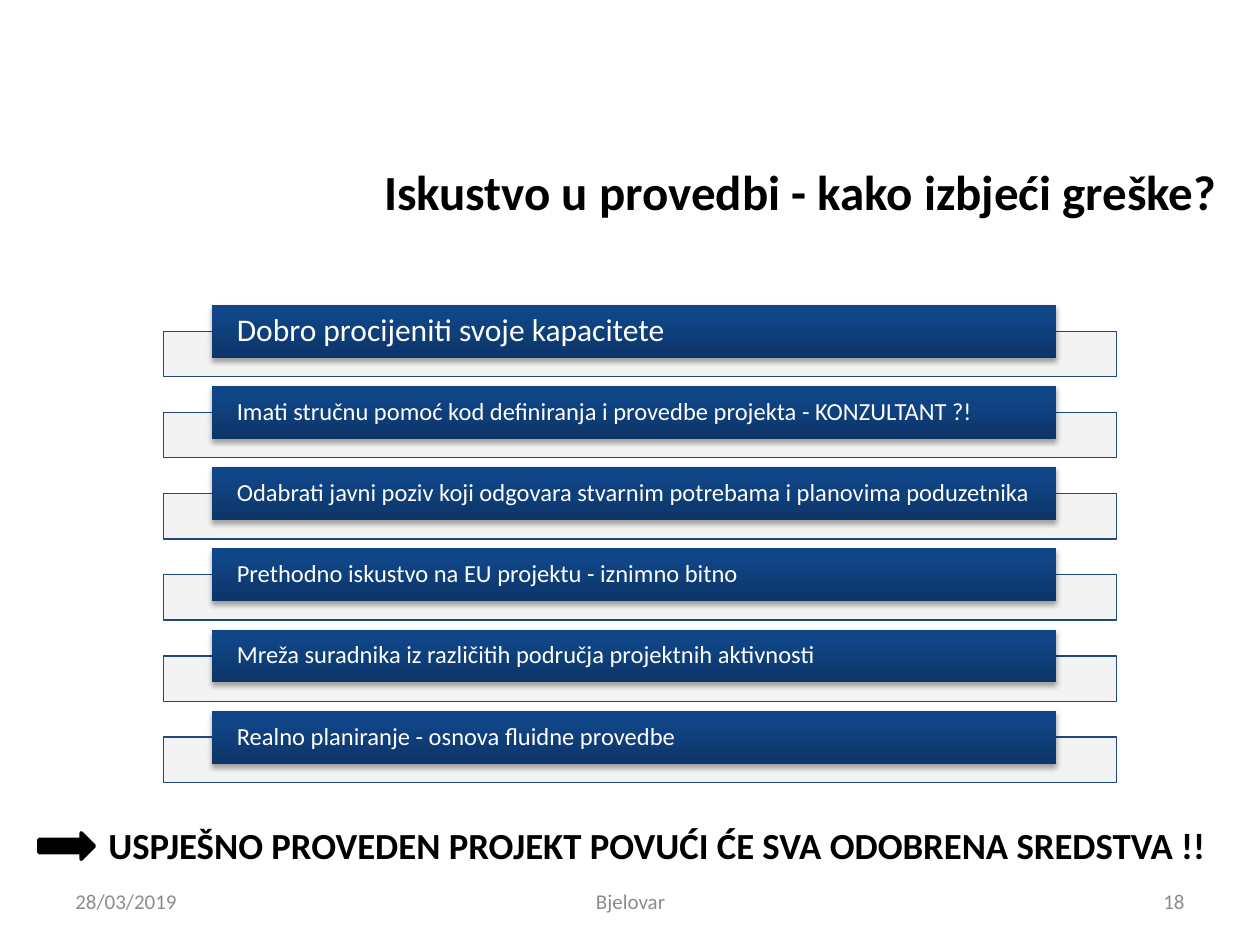
"""Build the slide on avoiding mistakes in project implementation."""
from lxml.etree import SubElement
from pptx import Presentation
from pptx.dml.color import RGBColor
from pptx.enum.shapes import MSO_SHAPE as SHAPE
from pptx.enum.text import MSO_ANCHOR as ANCHOR, PP_ALIGN as ALIGN
from pptx.oxml.ns import qn
from pptx.util import Inches, Pt

TITLE = "Iskustvo u provedbi - kako izbjeći greške?"
ADVICE = [
    ("Dobro procijeniti svoje kapacitete", 18),
    ("Imati stručnu pomoć kod definiranja i provedbe projekta - KONZULTANT ?!", 14),
    ("Odabrati javni poziv koji odgovara stvarnim potrebama i planovima poduzetnika", 14),
    ("Prethodno iskustvo na EU projektu - iznimno bitno", 14),
    ("Mreža suradnika iz različitih područja projektnih aktivnosti", 14),
    ("Realno planiranje - osnova fluidne provedbe", 14),
]
CONCLUSION = "USPJEŠNO PROVEDEN PROJEKT POVUĆI ĆE SVA ODOBRENA SREDSTVA !!"
FOOTER = [
    ("28/03/2019", 0.5, 2.33, ALIGN.LEFT),
    ("Bjelovar", 3.42, 3.17, ALIGN.CENTER),
    ("18", 7.17, 2.33, ALIGN.RIGHT),
]
COLORS = {"text": "000000", "footer": "8C8C8C", "white": "FFFFFF",
          "frame": "F2F2F2", "line": "1F497D"}
GRADIENT = [(0, "0D3568"), (80, "104587"), (100, "0E458A")]
FONT = "Calibri"
WIDTH, HEIGHT = 10, 7.5
ROW_TOP, ROW_STEP = 2.42, 0.644
FRAME_LEFT, FRAME_WIDTH, FRAME_HEIGHT, FRAME_DROP = 1.3, 7.56, 0.36, 0.21
BAR_LEFT, BAR_WIDTH, BAR_HEIGHT = 1.68, 6.7, 0.42


def rgb(name):
    return RGBColor.from_string(COLORS[name])


def box(*lengths):
    return [Inches(v) for v in lengths]


def write(sp, text, size, color, align=ALIGN.LEFT, bold=False,
          anchor=ANCHOR.MIDDLE, margins=(0.1, 0.05, 0.1, 0.05)):
    tf = sp.text_frame
    tf.word_wrap = True
    tf.vertical_anchor = anchor
    tf.margin_left, tf.margin_top, tf.margin_right, tf.margin_bottom = box(*margins)
    p = tf.paragraphs[0]
    p.text = text
    p.alignment = align
    p.font.name, p.font.size, p.font.bold = FONT, Pt(size), bold
    p.font.color.rgb = rgb(color)
    return p


def add_shape(s, kind, place, fill=None, line=None, weight=0.75):
    sp = s.shapes.add_shape(kind, *box(*place))
    sp.shadow.inherit = False
    if fill:
        sp.fill.solid()
        sp.fill.fore_color.rgb = rgb(fill)
    if line:
        sp.line.color.rgb = rgb(line)
        sp.line.width = Pt(weight)
    else:
        sp.line.fill.background()
    return sp


def add_color(parent, color, alpha=None):
    node = SubElement(parent, qn("a:srgbClr"), val=color)
    if alpha:
        SubElement(node, qn("a:alpha"), val=str(alpha * 1000))


def style_bar(sp):
    sp.fill.gradient()
    sp.fill.gradient_angle = 90
    stops = sp.element.spPr.find(".//" + qn("a:gsLst"))
    for stop in list(stops):
        stops.remove(stop)
    for position, color in GRADIENT:
        add_color(SubElement(stops, qn("a:gs"), pos=str(position * 1000)), color)
    effects = sp.element.spPr.find(qn("a:effectLst"))
    shadow = SubElement(effects, qn("a:outerShdw"), blurRad=str(Pt(3.1)),
                        dist=str(Pt(1.8)), dir="5400000", rotWithShape="0")
    add_color(shadow, COLORS["text"], 35)


def add_advice(s, row, text, size):
    top = ROW_TOP + row * ROW_STEP
    frame = add_shape(s, SHAPE.RECTANGLE,
                      (FRAME_LEFT, top + FRAME_DROP, FRAME_WIDTH, FRAME_HEIGHT),
                      "frame", "line")
    color = frame.element.spPr.find(qn("a:solidFill")).find(qn("a:srgbClr"))
    SubElement(color, qn("a:alpha"), val="90000")
    bar = add_shape(s, SHAPE.RECTANGLE, (BAR_LEFT, top, BAR_WIDTH, BAR_HEIGHT))
    style_bar(bar)
    p = write(bar, text, size, "white", margins=(0.2, 0, 0.2, 0))
    p.line_spacing = 0.9


def main():
    prs = Presentation()
    prs.slide_width, prs.slide_height = box(WIDTH, HEIGHT)
    s = prs.slides.add_slide(prs.slide_layouts[5])
    title = s.shapes.title
    title.left, title.top, title.width, title.height = box(0.75, 0.89, 9, 1.25)
    write(title, TITLE, 28, "text", ALIGN.RIGHT, True)
    for row, (text, size) in enumerate(ADVICE):
        add_advice(s, row, text, size)
    conclusion = s.shapes.add_textbox(*box(0.24, 6.48, WIDTH - 0.24, 0.45))
    write(conclusion, CONCLUSION, 21, "text", bold=True, anchor=ANCHOR.TOP,
          margins=(0.62, 0.05, 0.1, 0.05))
    add_shape(s, SHAPE.RIGHT_ARROW, (0.31, 6.61, 0.44, 0.21), "text", "text", 2)
    for text, left, width, align in FOOTER:
        sp = s.shapes.add_textbox(*box(left, 6.95, width, 0.4))
        write(sp, text, 12, "footer", align)
    prs.save("out.pptx")


if __name__ == "__main__":
    main()
